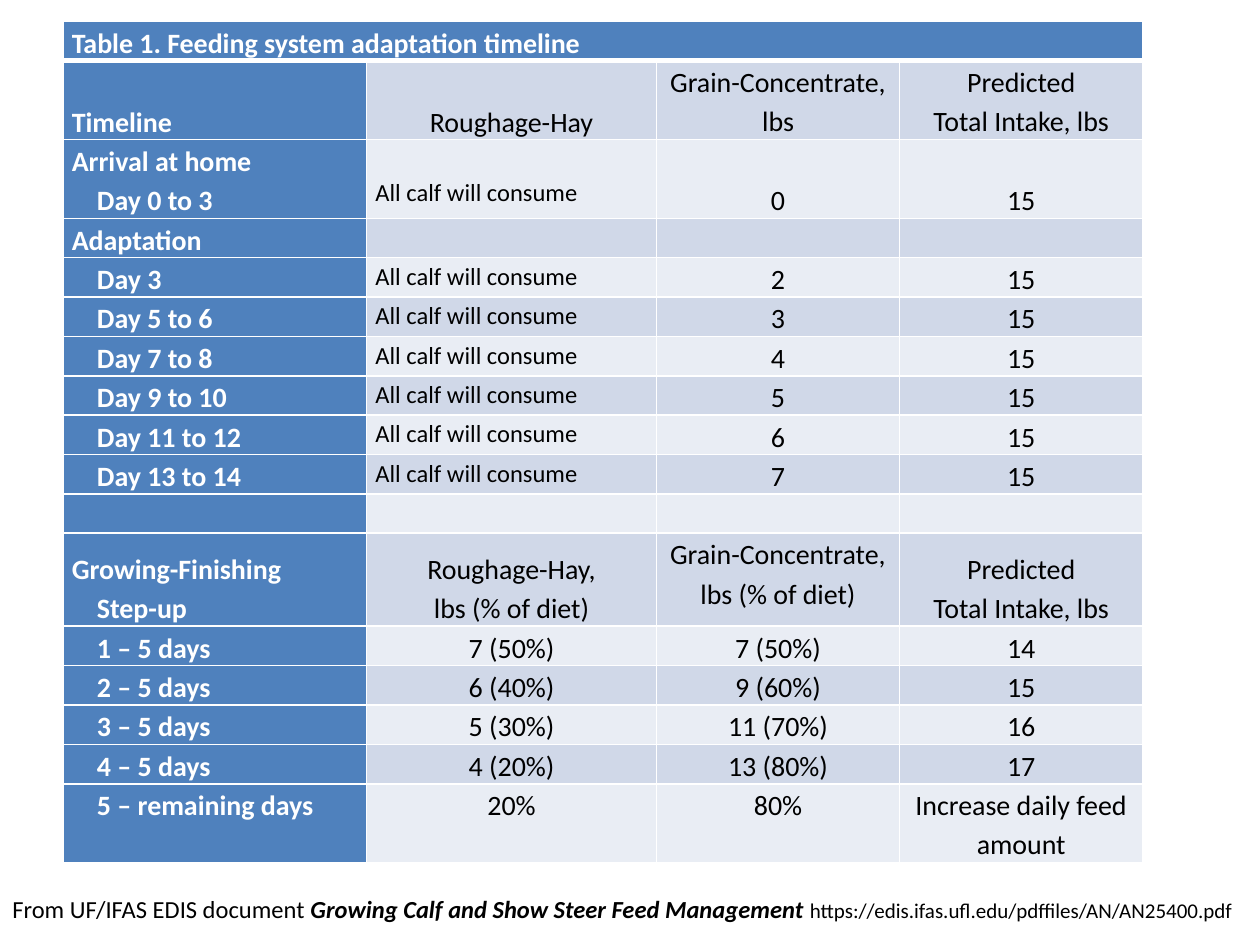
from dataclasses import dataclass

from lxml import etree
from pptx import Presentation
from pptx import util as u
from pptx.dml.color import RGBColor
from pptx.enum import text
from pptx.oxml import ns

COLORS = {
    "header": "4F81BD",
    "dark_band": "D0D8E8",
    "light_band": "E9EDF4",
    "black": "000000",
    "white": "FFFFFF",
}
FONT = "Calibri"
COLUMN_WIDTHS = [2.41, 2.3, 1.93, 1.93]
TOP, BOTTOM = text.MSO_ANCHOR.TOP, text.MSO_ANCHOR.BOTTOM
CONSUME = "All calf will consume"
INDENT = "\t"


@dataclass
class FeedRow:
    cells: tuple[str, ...]
    height: float = 0.29
    anchors: tuple = (TOP, TOP, TOP, TOP)


def adaptation_row(days: str, grain: int) -> FeedRow:
    return FeedRow((INDENT + days, CONSUME, str(grain), "15"))


def step_row(step: int, roughage: str, grain: str, intake: int) -> FeedRow:
    return FeedRow((f"{INDENT}{step} – 5 days", roughage, grain, str(intake)))


ADAPTATION_DAYS = ["Day 3", "Day 5 to 6", "Day 7 to 8", "Day 9 to 10", "Day 11 to 12", "Day 13 to 14"]
FEED_ROWS = [
    FeedRow(("Table 1. Feeding system adaptation timeline", "", "", ""), anchors=(BOTTOM,) * 4),
    FeedRow(
        ("Timeline", "Roughage-Hay", "Grain-Concentrate, lbs", "Predicted\nTotal Intake, lbs"),
        0.59,
        (BOTTOM, BOTTOM, TOP, TOP),
    ),
    FeedRow(
        (f"Arrival at home\n{INDENT}Day 0 to 3", CONSUME, "0", "15"),
        0.59,
        (TOP, BOTTOM, BOTTOM, BOTTOM),
    ),
    FeedRow(("Adaptation", "", "", "")),
    *[adaptation_row(days, grain) for grain, days in enumerate(ADAPTATION_DAYS, 2)],
    FeedRow(("", "", "", ""), 0.31),
    FeedRow(
        (
            f"Growing-Finishing\n{INDENT}Step-up",
            "Roughage-Hay,\nlbs (% of diet)",
            "Grain-Concentrate,\nlbs (% of diet)",
            "Predicted\nTotal Intake, lbs",
        ),
        0.74,
        (BOTTOM, BOTTOM, TOP, BOTTOM),
    ),
    step_row(1, "7 (50%)", "7 (50%)", 14),
    step_row(2, "6 (40%)", "9 (60%)", 15),
    step_row(3, "5 (30%)", "11 (70%)", 16),
    step_row(4, "4 (20%)", "13 (80%)", 17),
    FeedRow((INDENT + "5 – remaining days", "20%", "80%", "Increase daily feed amount"), 0.59),
]


def apply_format(target, values: dict) -> None:
    for name, value in values.items():
        setattr(target, name, value)


def add_run(paragraph, words: str, color: str, size: float, **style) -> None:
    run = paragraph.add_run()
    run.text = words
    apply_format(run.font, {"name": FONT, "size": u.Pt(size), "bold": False, **style})
    run.font.color.rgb = RGBColor.from_string(COLORS[color])


def add_borders(cell, widths: dict[str, float]) -> None:
    properties = cell._tc.get_or_add_tcPr()
    for index, (side, width) in enumerate(widths.items()):
        line = etree.Element(ns.qn(f"a:{side}"), w=str(u.Pt(width)))
        fill = etree.SubElement(line, ns.qn("a:solidFill"))
        etree.SubElement(fill, ns.qn("a:srgbClr"), val=COLORS["white"])
        properties.insert(index, line)


def write_cell(cell, words: str, is_header: bool) -> None:
    is_small = words == CONSUME
    cell.text_frame.word_wrap = True
    for index, line in enumerate(words.split("\n") if words else []):
        paragraph = cell.text_frame.paragraphs[0] if index == 0 else cell.text_frame.add_paragraph()
        is_left = is_header or is_small
        paragraph.alignment = text.PP_ALIGN.LEFT if is_left else text.PP_ALIGN.CENTER
        paragraph.line_spacing = 1.15
        if line.startswith(INDENT):
            paragraph._p.get_or_add_pPr().set("marL", str(u.Inches(0.2)))
        color = "white" if is_header else "black"
        add_run(paragraph, line.strip(), color, 14 if is_small else 16, bold=is_header)


def draw_feed_table(slide) -> None:
    frame = slide.shapes.add_table(
        len(FEED_ROWS), len(COLUMN_WIDTHS),
        u.Inches(0.5), u.Inches(0.17),
        u.Inches(sum(COLUMN_WIDTHS)), u.Inches(sum(row.height for row in FEED_ROWS)),
    )
    table = frame.table
    for column, width in zip(table.columns, COLUMN_WIDTHS):
        column.width = u.Inches(width)
    for row_index, feed_row in enumerate(FEED_ROWS):
        table.rows[row_index].height = u.Inches(feed_row.height)
        band = "dark_band" if row_index % 2 else "light_band"
        for column_index, words in enumerate(feed_row.cells):
            cell = table.cell(row_index, column_index)
            is_header = row_index == 0 or column_index == 0
            raised = words == CONSUME and feed_row.anchors[column_index] == BOTTOM
            apply_format(cell, {
                "margin_left": u.Inches(0.07),
                "margin_right": u.Inches(0.07),
                "margin_top": 0,
                "margin_bottom": u.Inches(0.08 if raised else 0),
                "vertical_anchor": feed_row.anchors[column_index],
            })
            cell.fill.solid()
            cell.fill.fore_color.rgb = RGBColor.from_string(COLORS["header" if is_header else band])
            add_borders(cell, {
                "lnL": 1,
                "lnR": 1,
                "lnT": 3 if row_index == 1 else 1,
                "lnB": 3 if row_index == 0 else 1,
            })
            write_cell(cell, words, is_header)
    table.cell(0, 0).merge(table.cell(0, len(COLUMN_WIDTHS) - 1))


def draw_citation(slide) -> None:
    citation = slide.shapes.add_textbox(u.Inches(0), u.Inches(7.05), u.Inches(10), u.Inches(0.34))
    citation.text_frame.word_wrap = True
    paragraph = citation.text_frame.paragraphs[0]
    add_run(paragraph, "From UF/IFAS EDIS document ", "black", 14)
    add_run(paragraph, "Growing Calf and Show Steer Feed Management ", "black", 14, bold=True, italic=True)
    add_run(paragraph, "https://edis.ifas.ufl.edu/pdffiles/AN/AN25400.pdf", "black", 12)


def main() -> None:
    presentation = Presentation()
    apply_format(presentation, {"slide_width": u.Inches(10), "slide_height": u.Inches(7.5)})
    slide = presentation.slides.add_slide(presentation.slide_layouts[6])
    draw_feed_table(slide)
    draw_citation(slide)
    presentation.save("out.pptx")


if __name__ == "__main__":
    main()
